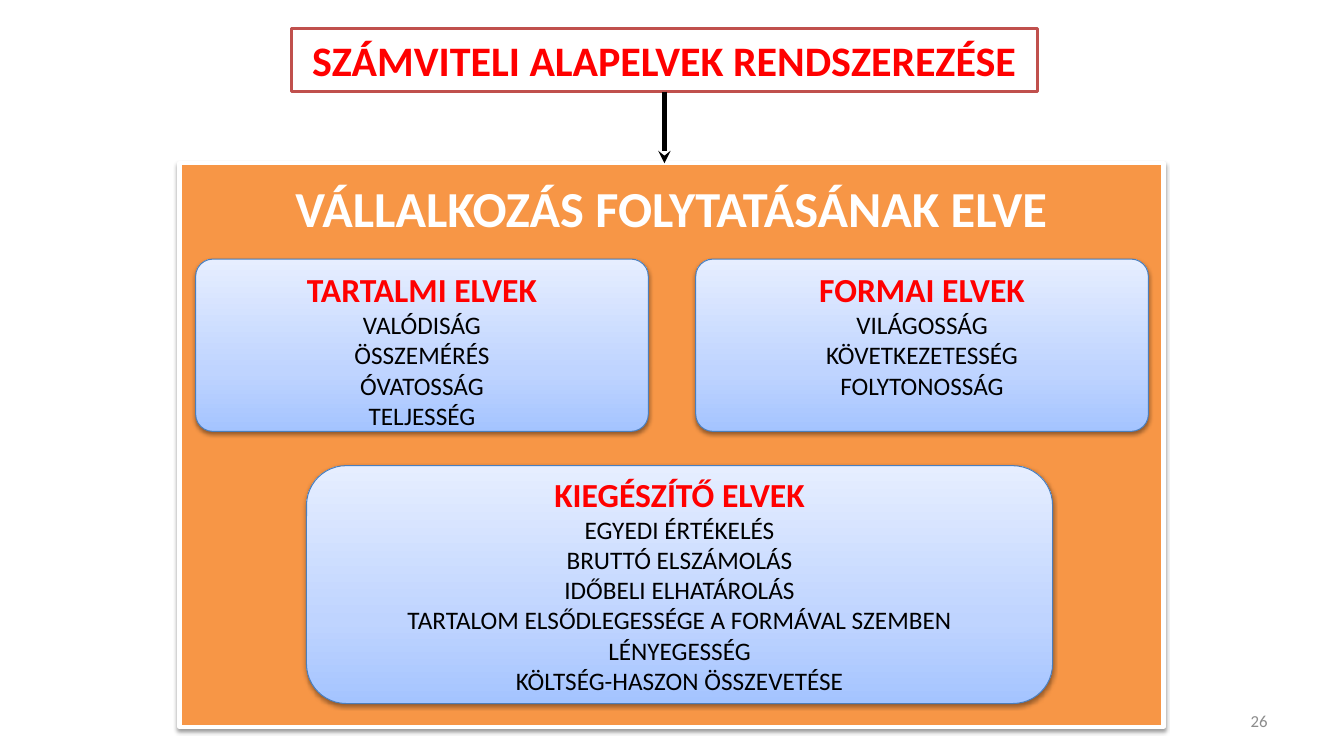
from lxml import etree
from pptx import Presentation, util as u
from pptx.dml.color import RGBColor
from pptx.enum import shapes, text
from pptx.oxml.ns import qn

FONT = "Calibri"
RED, BLACK, WHITE, ORANGE, GREY = "FF0000", "000000", "FFFFFF", "F79646", "8C8C8C"
TITLE = "SZÁMVITELI ALAPELVEK RENDSZEREZÉSE"
PRINCIPLE = "VÁLLALKOZÁS FOLYTATÁSÁNAK ELVE"
PAGE = "26"
GRADIENT = [(0, "A4C4FF"), (35, "BFD4FF"), (100, "E6EEFF")]
TOP, MIDDLE = text.MSO_ANCHOR.TOP, text.MSO_ANCHOR.MIDDLE
CENTER, RIGHT = text.PP_ALIGN.CENTER, text.PP_ALIGN.RIGHT
RECT = shapes.MSO_SHAPE.RECTANGLE
ROUNDED = shapes.MSO_SHAPE.ROUNDED_RECTANGLE

GROUPS = [
    ("TARTALMI ELVEK", ["VALÓDISÁG", "ÖSSZEMÉRÉS", "ÓVATOSSÁG", "TELJESSÉG"],
     (1.94, 2.57, 4.49, 1.71), 0.1, TOP),
    ("FORMAI ELVEK", ["VILÁGOSSÁG", "KÖVETKEZETESSÉG", "FOLYTONOSSÁG"],
     (6.9, 2.57, 4.49, 1.71), 0.1, TOP),
    ("KIEGÉSZÍTŐ ELVEK",
     ["EGYEDI ÉRTÉKELÉS", "BRUTTÓ ELSZÁMOLÁS", "IDŐBELI ELHATÁROLÁS",
      "TARTALOM ELSŐDLEGESSÉGE A FORMÁVAL SZEMBEN", "LÉNYEGESSÉG",
      "KÖLTSÉG-HASZON ÖSSZEVETÉSE"],
     (3.04, 4.62, 7.4, 2.36), 0.167, MIDDLE),
]


def color(target, value):
    target.rgb = RGBColor.from_string(value)


def write(shape, lines, anchor, align=CENTER, wrap=True):
    frame = shape.text_frame
    frame.text = "\n".join(line for line, *_ in lines)
    frame.word_wrap = wrap
    frame.vertical_anchor = anchor
    for paragraph, (_, size, ink, bold) in zip(frame.paragraphs, lines):
        paragraph.alignment = align
        font = paragraph.runs[0].font
        font.name, font.size, font.bold = FONT, u.Pt(size), bold
        color(font.color, ink)


def add_box(kind, place, edge, width, fill=None):
    box = slide.shapes.add_shape(kind, *map(u.Inches, place))
    box.shadow.inherit = False
    color(box.line.color, edge)
    box.line.width = u.Pt(width)
    if fill:
        box.fill.solid()
        color(box.fill.fore_color, fill)
    return box


def add_child(parent, tag, **attributes):
    child = etree.SubElement(parent, qn(tag))
    for name, value in attributes.items():
        child.set(name, str(value))
    return child


def cast_shadow(box):
    effects = box._element.spPr.find(qn("a:effectLst"))
    shadow = add_child(effects, "a:outerShdw", blurRad=u.Pt(3.1), dist=u.Pt(1.6),
                       dir=5400000, rotWithShape=0)
    add_child(add_child(shadow, "a:srgbClr", val=BLACK), "a:alpha", val=38000)


def shade(box):
    box.fill.gradient()
    box.fill.gradient_angle = 90
    stops = box._element.spPr.find(".//" + qn("a:gsLst"))
    for stop in list(stops):
        stops.remove(stop)
    for position, value in GRADIENT:
        add_child(add_child(stops, "a:gs", pos=position * 1000), "a:srgbClr", val=value)


deck = Presentation()
deck.slide_width, deck.slide_height = u.Inches(13.33), u.Inches(7.5)
slide = deck.slides.add_slide(deck.slide_layouts[6])

page = slide.shapes.add_textbox(*map(u.Inches, (9.56, 6.95, 3.11, 0.4)))
write(page, [(PAGE, 12, GREY, False)], MIDDLE, RIGHT)

title = add_box(RECT, (2.89, 0.28, 7.4, 0.63), "C0504D", 2, WHITE)
write(title, [(TITLE, 30, RED, True)], MIDDLE, wrap=False)

panel = add_box(RECT, (1.78, 1.62, 9.76, 5.59), WHITE, 3, ORANGE)
cast_shadow(panel)
write(panel, [(PRINCIPLE, 36, WHITE, True)], TOP, wrap=False)
panel.text_frame.margin_top = u.Inches(0.14)

arrow = slide.shapes.add_connector(shapes.MSO_CONNECTOR.STRAIGHT,
                                   *map(u.Inches, (6.59, 0.91, 6.59, 1.62)))
arrow.begin_connect(title, 2)
color(arrow.line.color, BLACK)
arrow.line.width = u.Pt(3)
add_child(arrow.line._get_or_add_ln(), "a:tailEnd", type="stealth")
add_child(arrow._element.spPr, "a:effectLst")

for heading, principles, place, rounding, anchor in GROUPS:
    group = add_box(ROUNDED, place, "4B7EBC", 0.75)
    group.adjustments[0] = rounding
    shade(group)
    cast_shadow(group)
    lines = [(heading, 24, RED, True)] + [(name, 18, BLACK, False) for name in principles]
    write(group, lines, anchor, wrap=anchor == TOP)

deck.save("out.pptx")
